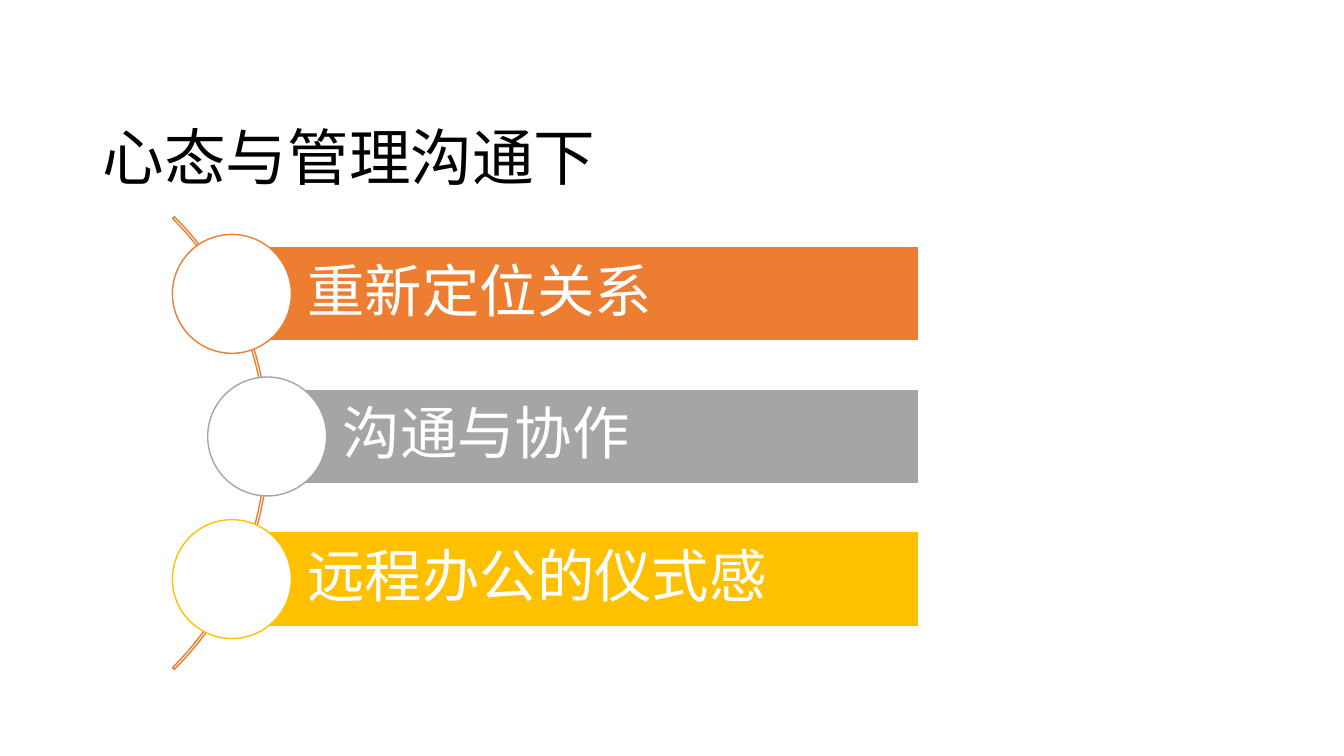
import pptx
import pptx.util
import pptx.dml.color
import pptx.enum.shapes
import pptx.enum.text
import lxml.etree

TITLE = "心态与管理沟通下"
# text, colour, left edge of the bar
TOPICS = [
    ("重新定位关系", "ED7D31", 2.30),
    ("沟通与协作", "A5A5A5", 2.65),
    ("远程办公的仪式感", "FFC000", 2.30),
]
FONT = "Noto Sans CJK SC"
WHITE, BLACK, ARC_COLOR = "FFFFFF", "000000", "ED7D31"

SLIDE_W, SLIDE_H = 13.33, 7.5
BAR_RIGHT, BAR_H = 9.11, 0.94
MIDDLE_Y, ROW_PITCH = 4.33, 1.415
CIRCLE = 1.18
ARC_SIZE, ARC_CENTER_X, ARC_CENTER_Y = 6.35, -0.515, 4.395

SHAPES = pptx.enum.shapes.MSO_SHAPE
ANCHOR = pptx.enum.text.MSO_ANCHOR


def rgb(color):
    return pptx.dml.color.RGBColor.from_string(color)


def inches(*lengths):
    return [pptx.util.Inches(length) for length in lengths]


def add_figure(slide, preset, box, fill, line):
    figure = slide.shapes.add_shape(preset, *inches(*box))
    figure.shadow.inherit = False
    if fill:
        figure.fill.solid()
        figure.fill.fore_color.rgb = rgb(fill)
    else:
        figure.fill.background()
    figure.line.color.rgb = rgb(line)
    figure.line.width = pptx.util.Pt(1)
    return figure


def write(shape, text, size, color, anchor, insets):
    """Put one left-aligned line in a shape; insets are left, top, right, bottom."""
    frame = shape.text_frame
    frame.text = text
    frame.word_wrap = True
    frame.vertical_anchor = anchor
    (frame.margin_left, frame.margin_top,
     frame.margin_right, frame.margin_bottom) = inches(*insets)
    paragraph = frame.paragraphs[0]
    paragraph.alignment = pptx.enum.text.PP_ALIGN.LEFT
    paragraph.line_spacing = 0.9
    font = paragraph.runs[0].font
    font.size = pptx.util.Pt(size)
    font.name = FONT
    font.color.rgb = rgb(color)
    east_asian = lxml.etree.SubElement(
        paragraph.runs[0]._r.get_or_add_rPr(), pptx.oxml.ns.qn("a:ea"))
    east_asian.set("typeface", FONT)


def main():
    deck = pptx.Presentation()
    deck.slide_width, deck.slide_height = inches(SLIDE_W, SLIDE_H)
    slide = deck.slides.add_slide(deck.slide_layouts[6])

    title = slide.shapes.add_textbox(*inches(0.92, 0.4, 11.5, 1.52))
    write(title, TITLE, 44, BLACK, ANCHOR.BOTTOM, (0.1, 0.05, 0.1, 0))

    arc_box = (ARC_CENTER_X - ARC_SIZE / 2, ARC_CENTER_Y - ARC_SIZE / 2,
               ARC_SIZE, ARC_SIZE)
    arc = add_figure(slide, SHAPES.BLOCK_ARC, arc_box, None, ARC_COLOR)
    for index, value in enumerate((189, 27, 0.004)):
        arc.adjustments[index] = value

    for row, (topic, color, left) in enumerate(TOPICS):
        center_y = MIDDLE_Y + (row - 1) * ROW_PITCH
        bar_box = (left, center_y - BAR_H / 2, BAR_RIGHT - left, BAR_H)
        bar = add_figure(slide, SHAPES.RECTANGLE, bar_box, color, WHITE)
        write(bar, topic, 41, WHITE, ANCHOR.MIDDLE, (0.75, 0.11, 0.11, 0.11))
        circle_box = (left - CIRCLE / 2, center_y - CIRCLE / 2, CIRCLE, CIRCLE)
        add_figure(slide, SHAPES.OVAL, circle_box, WHITE, color)

    deck.save("out.pptx")


if __name__ == "__main__":
    main()
